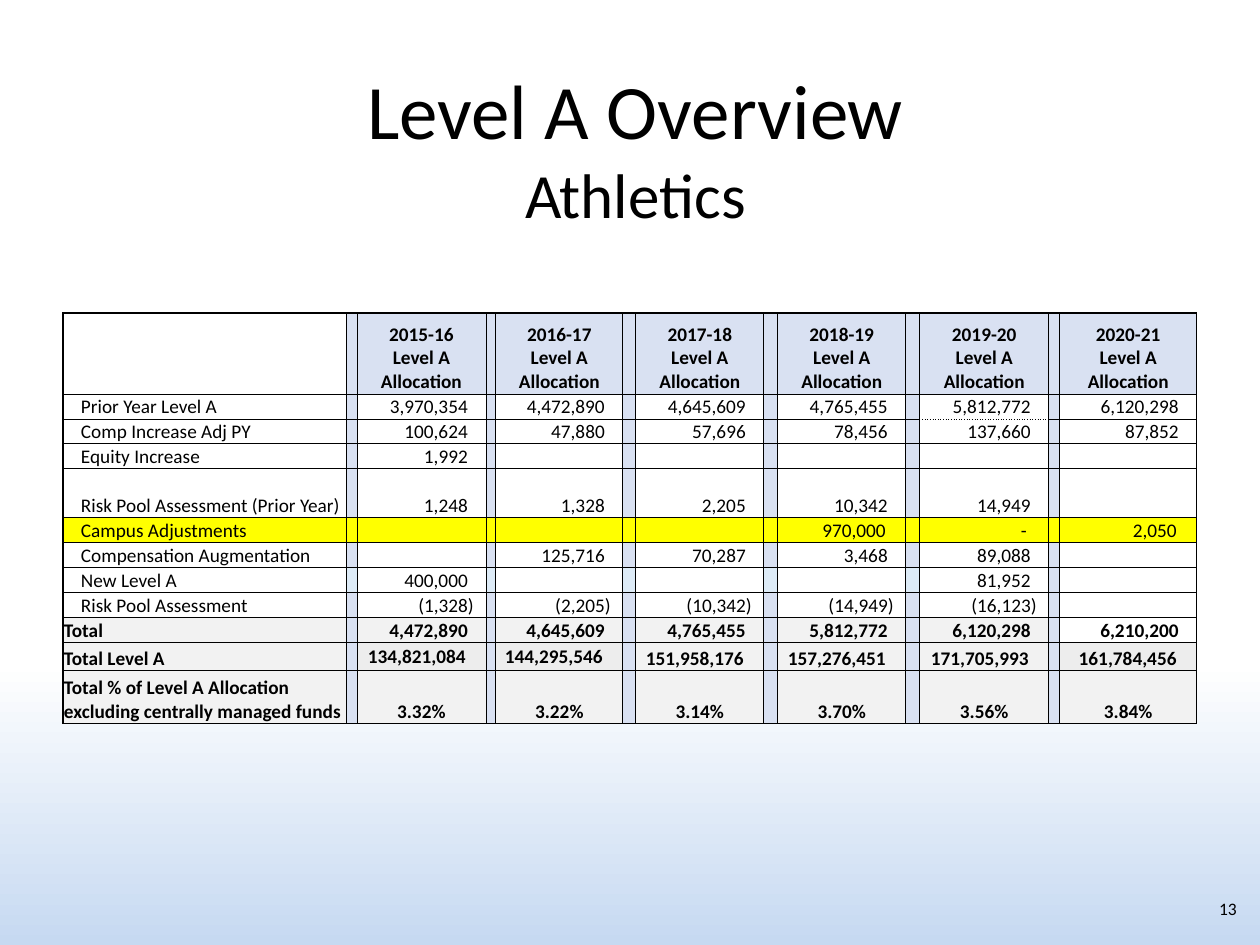
from lxml import etree
from pptx import Presentation
from pptx import util as u
from pptx.dml.color import RGBColor
from pptx.enum import text
from pptx.oxml import ns

PX = 914400 / 126
FONT = "Calibri"
BLACK = RGBColor(0, 0, 0)
WHITE = RGBColor(255, 255, 255)
SKY = RGBColor(0xC6, 0xD9, 0xF1)
BLUE = RGBColor(0xD9, 0xE1, 0xF2)
PALE = RGBColor(0xDD, 0xEB, 0xF7)
GREY = RGBColor(0xF2, 0xF2, 0xF2)
DIM = RGBColor(0xED, 0xED, 0xED)
YELLOW = RGBColor(255, 255, 0)

COLS = [283, 11, 129, 10, 127, 13, 128, 14, 128, 14, 129, 11, 137]
YEARS = ["2015-16", "2016-17", "2017-18", "2018-19", "2019-20", "2020-21"]
# height, label, values, fill of label and values, fill of gaps
ROWS = [
    (81, "", [y + "\nLevel A Allocation" for y in YEARS], BLUE, BLUE),
    (25, "Prior Year Level A",
     ["3,970,354", "4,472,890", "4,645,609", "4,765,455", "5,812,772", "6,120,298"], None, BLUE),
    (25, "Comp Increase Adj PY",
     ["100,624", "47,880", "57,696", "78,456", "137,660", "87,852"], None, BLUE),
    (25, "Equity Increase", ["1,992", "", "", "", "", ""], None, BLUE),
    (49, "Risk Pool Assessment (Prior Year)",
     ["1,248", "1,328", "2,205", "10,342", "14,949", ""], None, BLUE),
    (25, "Campus Adjustments", ["", "", "", "970,000", "-", "2,050"], YELLOW, YELLOW),
    (25, "Compensation Augmentation",
     ["", "125,716", "70,287", "3,468", "89,088", ""], None, BLUE),
    (25, "New Level A", ["400,000", "", "", "", "81,952", ""], None, PALE),
    (25, "Risk Pool Assessment",
     ["(1,328)", "(2,205)", "(10,342)", "(14,949)", "(16,123)", ""], None, BLUE),
    (25, "Total",
     ["4,472,890", "4,645,609", "4,765,455", "5,812,772", "6,120,298", "6,210,200"], GREY, BLUE),
    (28, "Total Level A",
     ["134,821,084", "144,295,546", "151,958,176", "157,276,451", "171,705,993", "161,784,456"],
     GREY, BLUE),
    (53, "Total % of Level A Allocation excluding centrally managed funds",
     ["3.32%", "3.22%", "3.14%", "3.70%", "3.56%", "3.84%"], GREY, BLUE),
]
HEAD, PRIOR, TOTAL, LEVEL, SHARE = 0, 1, 9, 10, 11
LAST = len(COLS) - 1
ODD = {(HEAD, 0): None, (TOTAL, LAST): None, (7, 11): BLUE,
       (LEVEL, 2): DIM, (LEVEL, 4): DIM, (LEVEL, LAST): DIM}
DOTS = {(PRIOR, 10, "B"), (PRIOR + 1, 10, "T")}


def px(n):
    return u.Emu(round(n * PX))


def put(obj, vals):
    for key, val in vals.items():
        setattr(obj, key, val)


def style(font, size, bold=False):
    put(font, {"name": FONT, "size": u.Pt(size), "bold": bold})
    font.color.rgb = BLACK


def edge(cell, row, col):
    """Draw the four borders of a cell, heavier on the outside of the table."""
    outer = {"L": col == 0, "R": col == LAST, "T": row == HEAD, "B": row == SHARE}
    prop = cell._tc.get_or_add_tcPr()
    for side, thick in outer.items():
        line = etree.SubElement(prop, ns.qn("a:ln" + side), w="12700" if thick else "6350")
        fill = etree.SubElement(line, ns.qn("a:solidFill"))
        etree.SubElement(fill, ns.qn("a:srgbClr"), val=str(BLACK))
        dash = "sysDot" if (row, col, side) in DOTS else "solid"
        etree.SubElement(line, ns.qn("a:prstDash"), val=dash)


def paint(cell, color):
    if color is None:
        cell.fill.background()
    else:
        cell.fill.solid()
        cell.fill.fore_color.rgb = color


def write(cell, words, row, col):
    left, right, align = 1, 1, text.PP_ALIGN.LEFT
    if col == 0:
        left = 18 if row < TOTAL else 1
    elif row in (HEAD, SHARE):
        align = text.PP_ALIGN.CENTER
    else:
        align = text.PP_ALIGN.RIGHT
        right = 12 if words.endswith(")") else 20 if row in (LEVEL, 5) else 18
    if not words or words == "-":
        right = 1 if not words else 22
    mid = row == LEVEL and col in (2, 4)
    put(cell, {"margin_left": px(left), "margin_right": px(right),
               "margin_top": px(1), "margin_bottom": 0,
               "vertical_anchor": text.MSO_ANCHOR.MIDDLE if mid else text.MSO_ANCHOR.BOTTOM})
    cell.text_frame.text = words
    for para in cell.text_frame.paragraphs:
        para.alignment = align
        for run in para.runs:
            style(run.font, 11, row == HEAD or row >= TOTAL)
        if not words:
            etree.SubElement(para._p, ns.qn("a:endParaRPr"), sz="1100")


def grid(slide, x, y):
    wide, high = sum(COLS), sum(row[0] for row in ROWS)
    table = slide.shapes.add_table(len(ROWS), len(COLS), px(x), px(y), px(wide), px(high)).table
    put(table, {"first_row": False, "horz_banding": False})
    for col, size in zip(table.columns, COLS):
        col.width = px(size)
    for r, (size, label, vals, fill, gap) in enumerate(ROWS):
        table.rows[r].height = px(size)
        for c in range(len(COLS)):
            cell = table.cell(r, c)
            words = label if c == 0 else "" if c % 2 else vals[c // 2 - 1]
            write(cell, words, r, c)
            edge(cell, r, c)
            paint(cell, ODD.get((r, c), gap if c % 2 else fill))


def title(slide, x, y, w, h):
    shape = slide.shapes.title
    put(shape, {"left": px(x), "top": px(y), "width": px(w), "height": px(h)})
    frame = shape.text_frame
    put(frame, {"word_wrap": True, "auto_size": text.MSO_AUTO_SIZE.NONE,
                "vertical_anchor": text.MSO_ANCHOR.TOP, "margin_top": px(10)})
    para = frame.paragraphs[0]
    para.alignment = text.PP_ALIGN.CENTER
    for words, size in (("Level A Overview", 44), ("Athletics", 36)):
        if para.runs:
            para.add_line_break()
        run = para.add_run()
        run.text = words
        style(run.font, size)


def number(slide, x, y, w, h):
    frame = slide.shapes.add_textbox(px(x), px(y), px(w), px(h)).text_frame
    frame.word_wrap = True
    para = frame.paragraphs[0]
    para.alignment = text.PP_ALIGN.RIGHT
    run = para.add_run()
    run.text = "13"
    style(run.font, 10)


def back(slide):
    fill = slide.background.fill
    fill.gradient()
    fill.gradient_angle = 270
    for stop, place, color in zip(fill.gradient_stops, (0.7, 1), (WHITE, SKY)):
        stop.position = place
        stop.color.rgb = color


def main():
    deck = Presentation()
    put(deck, {"slide_width": px(1260), "slide_height": px(945)})
    slide = deck.slides.add_slide(deck.slide_layouts[5])
    back(slide)
    title(slide, 42, 53, 1187, 105)
    number(slide, 955, 892, 294, 50)
    grid(slide, 63, 313)
    deck.save("out.pptx")


if __name__ == "__main__":
    main()
